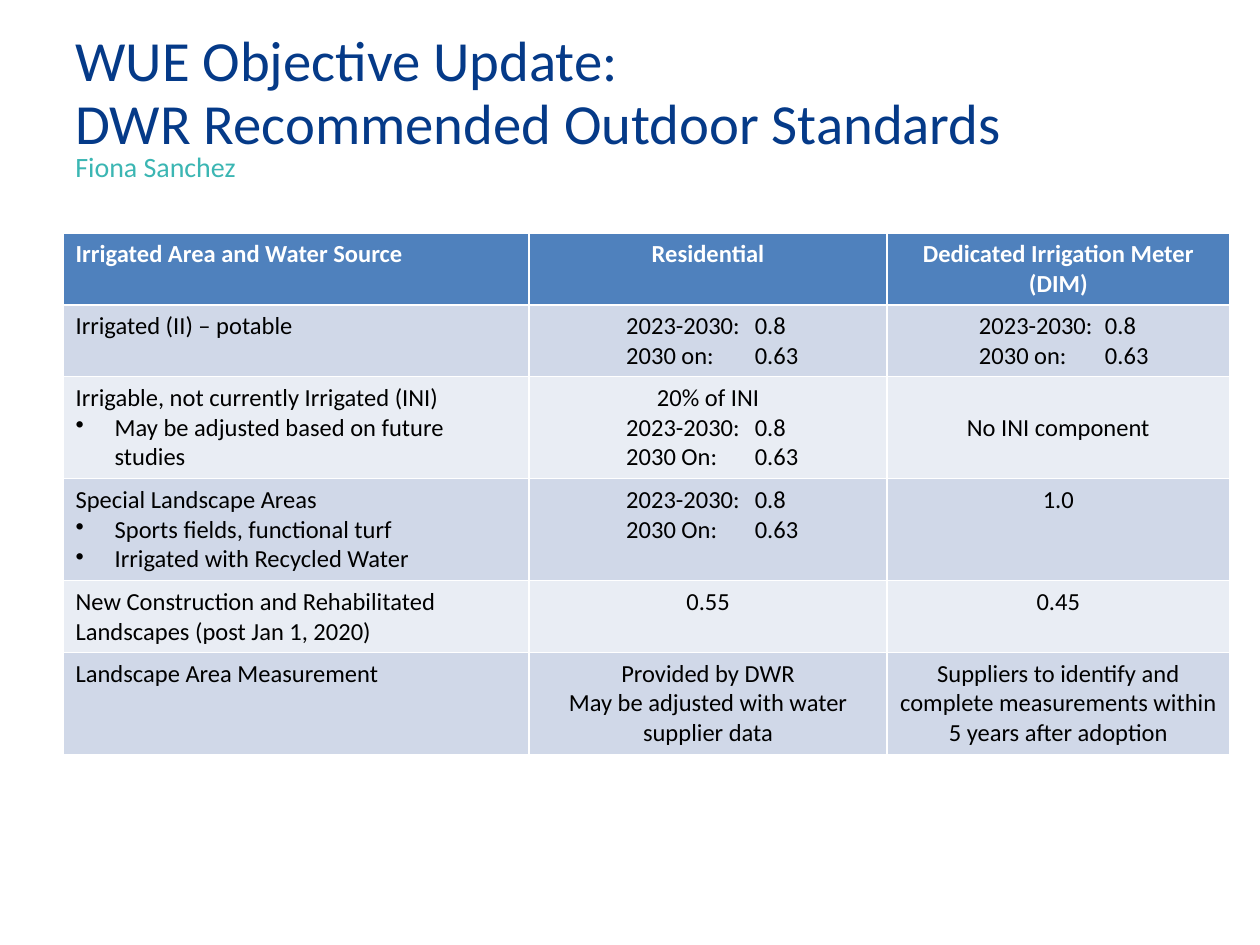
import pptx
import pptx.util
import pptx.dml.color
import pptx.enum.text
import pptx.oxml
import pptx.oxml.ns

Inches = pptx.util.Inches
Pt = pptx.util.Pt
ALIGN = pptx.enum.text.PP_ALIGN
ANCHOR = pptx.enum.text.MSO_ANCHOR

COLORS = {
    "title": "053A88",
    "presenter": "3BB6B3",
    "header": "4F81BD",
    "odd_row": "D0D8E8",
    "even_row": "E9EDF4",
    "header_text": "FFFFFF",
    "body_text": "000000",
}
COLUMN_WIDTHS = [3.7, 2.84, 2.72]
ROW_HEIGHTS = [0.57, 0.57, 0.81, 0.81, 0.57, 0.81]
VALUE_TABS = {1: (0.67, 1.69), 2: (0.63, 1.63)}
BULLET = "• "
STANDARDS = [
    ["Irrigated Area and Water Source", "Residential",
     "Dedicated Irrigation Meter (DIM)"],
    ["Irrigated (II) – potable",
     "\t2023-2030:\t0.8\n\t2030 on:\t0.63",
     "\t2023-2030:\t0.8\n\t2030 on:\t0.63"],
    ["Irrigable, not currently Irrigated (INI)\n• May be adjusted based on future studies",
     "20% of INI\n\t2023-2030:\t0.8\n\t2030 On:\t0.63",
     "No INI component"],
    ["Special Landscape Areas\n• Sports fields, functional turf\n• Irrigated with Recycled Water",
     "\t2023-2030:\t0.8\n\t2030 On:\t0.63",
     "1.0"],
    ["New Construction and Rehabilitated Landscapes (post Jan 1, 2020)", "0.55", "0.45"],
    ["Landscape Area Measurement",
     "Provided by DWR\nMay be adjusted with water supplier data",
     "Suppliers to identify and complete measurements within 5 years after adoption"],
]


def rgb(name):
    return pptx.dml.color.RGBColor.from_string(COLORS[name])


def set_font(paragraph, size, color, bold=False):
    paragraph.font.name = "Calibri"
    paragraph.font.size = Pt(size)
    paragraph.font.bold = bold
    paragraph.font.color.rgb = rgb(color)


def add_heading(slide, text, top, height, size, color, anchor, spacing=None):
    heading = slide.shapes.add_textbox(Inches(0.5), Inches(top), Inches(9), Inches(height))
    frame = heading.text_frame
    frame.word_wrap = True
    frame.vertical_anchor = anchor
    line = frame.paragraphs[0]
    line.text = text
    line.line_spacing = spacing
    set_font(line, size, color)


def add_bullet(paragraph):
    properties = paragraph._p.get_or_add_pPr()
    properties.set("marL", str(Inches(0.31)))
    properties.set("indent", str(-Inches(0.31)))
    bullet = pptx.oxml.parse_xml(
        f'<a:buChar {pptx.oxml.ns.nsdecls("a")} char="{BULLET.strip()}"/>')
    properties.append(bullet)


def add_tabs(paragraph, positions):
    stops = "".join(f'<a:tab pos="{Inches(stop)}" algn="l"/>' for stop in positions)
    tabs = pptx.oxml.parse_xml(f'<a:tabLst {pptx.oxml.ns.nsdecls("a")}>{stops}</a:tabLst>')
    paragraph._p.get_or_add_pPr().append(tabs)


def fill_cell(cell, text, row, column):
    is_header = row == 0
    fill = "header" if is_header else "odd_row" if row % 2 else "even_row"
    cell.fill.solid()
    cell.fill.fore_color.rgb = rgb(fill)
    cell.text = text.replace(BULLET, "")
    for line, source in zip(cell.text_frame.paragraphs, text.split("\n")):
        if source.startswith(BULLET):
            add_bullet(line)
        has_tabs = "\t" in source
        if has_tabs:
            add_tabs(line, VALUE_TABS[column])
        line.alignment = ALIGN.LEFT if column == 0 or has_tabs else ALIGN.CENTER
        set_font(line, 14, "header_text" if is_header else "body_text", is_header)


def add_standards_table(slide):
    standards = slide.shapes.add_table(
        len(ROW_HEIGHTS), len(COLUMN_WIDTHS), Inches(0.5), Inches(1.85),
        Inches(sum(COLUMN_WIDTHS)), Inches(sum(ROW_HEIGHTS))).table
    for column, width in zip(standards.columns, COLUMN_WIDTHS):
        column.width = Inches(width)
    for row, height in zip(standards.rows, ROW_HEIGHTS):
        row.height = Inches(height)
    for row, texts in enumerate(STANDARDS):
        for column, text in enumerate(texts):
            fill_cell(standards.cell(row, column), text, row, column)
    standards.cell(2, 2).vertical_anchor = ANCHOR.MIDDLE


def main():
    deck = pptx.Presentation()
    deck.slide_width = Inches(10)
    deck.slide_height = Inches(7.5)
    slide = deck.slides.add_slide(deck.slide_layouts[6])
    add_heading(slide, "WUE Objective Update:\vDWR Recommended Outdoor Standards",
                0.23, 1.06, 32.4, "title", ANCHOR.BOTTOM, Pt(36))
    add_heading(slide, "Fiona Sanchez", 1.14, 0.35, 16, "presenter", ANCHOR.TOP)
    add_standards_table(slide)
    deck.save("out.pptx")


if __name__ == "__main__":
    main()
